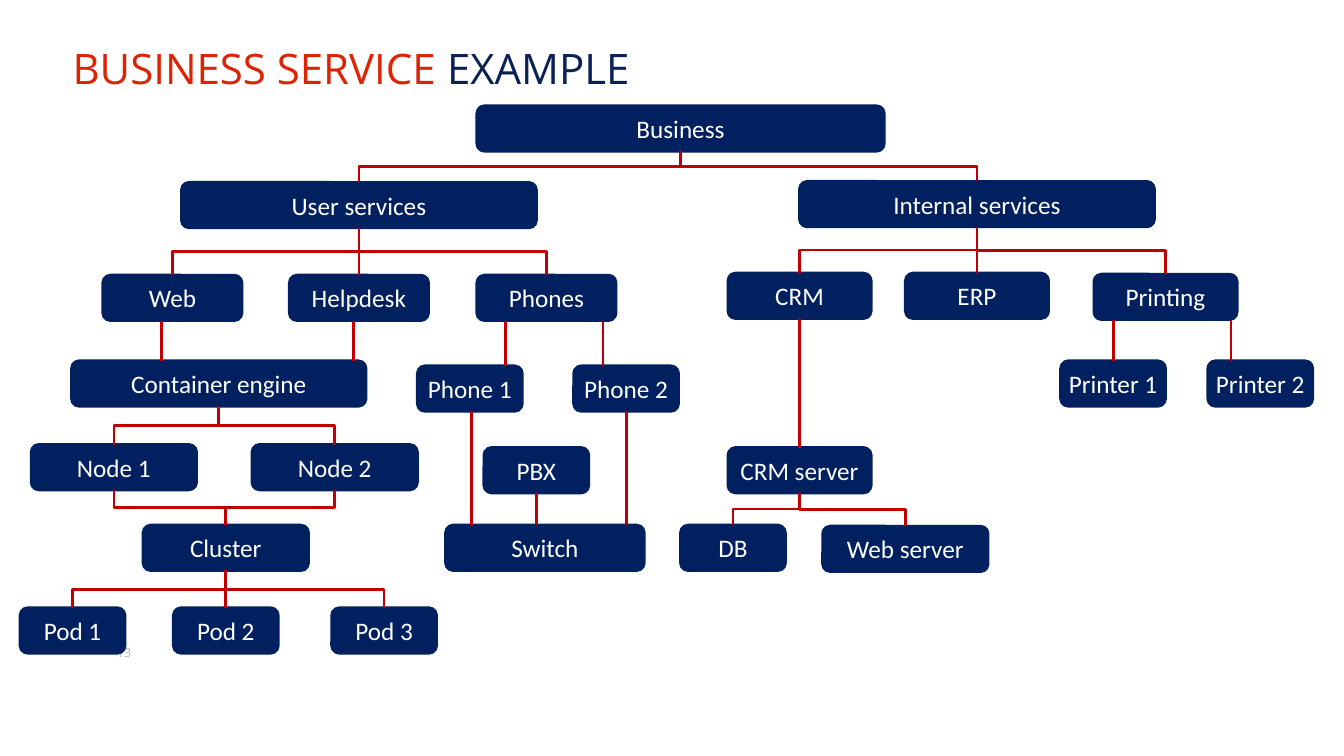
from dataclasses import dataclass
from typing import Optional
from lxml.etree import SubElement
from pptx import Presentation as Deck
from pptx.dml.color import RGBColor as Color
from pptx.enum.shapes import MSO_CONNECTOR as Wire, MSO_SHAPE as Form
from pptx.enum.text import MSO_ANCHOR as Anchor, PP_ALIGN as Align
from pptx.oxml.ns import qn
from pptx.util import Inches, Pt

NAVY = Color(0x00, 0x20, 0x60)
INK = Color(0x0B, 0x21, 0x56)
RED = Color(0xC0, 0x00, 0x00)
FLAME = Color(0xDE, 0x23, 0x04)
WHITE = Color(0xFF, 0xFF, 0xFF)
GREY = Color(0xB6, 0xB6, 0xB6)
TALL = 4.5
SMALL, MID, WIDE = 10.4, 14.2, 16.4


def grid(count: float) -> int:
    return Inches(count / 10)


@dataclass(frozen=True)
class Node:
    name: str
    col: float
    row: float
    span: float

    @property
    def mid(self) -> int:
        return grid(self.col) + grid(self.span) // 2


@dataclass(frozen=True)
class Link:
    start: str
    end: str
    col: Optional[float] = None


NODES = [
    Node("Business", 47.3, 10.5, 40.4),
    Node("User services", 18, 18.1, 35.2),
    Node("Internal services", 79.3, 18, 35.2),
    Node("Web", 10.2, 27.3, 13.8),
    Node("Helpdesk", 28.7, 27.3, 13.8),
    Node("Phones", 47.3, 27.3, 13.8),
    Node("CRM", 72.2, 27.1, MID),
    Node("ERP", 89.8, 27.1, MID),
    Node("Printing", 108.5, 27.2, MID),
    Node("Container engine", 7.1, 35.8, 29.2),
    Node("Phone 1", 41.4, 36.3, SMALL),
    Node("Phone 2", 56.9, 36.3, SMALL),
    Node("Printer 1", 105.2, 35.8, SMALL),
    Node("Printer 2", 119.8, 35.8, SMALL),
    Node("Node 1", 3.1, 44.1, WIDE),
    Node("Node 2", 25, 44.1, WIDE),
    Node("PBX", 48, 44.4, SMALL),
    Node("CRM server", 72.2, 44.4, MID),
    Node("Cluster", 14.2, 52.1, WIDE),
    Node("Switch", 44.2, 52.1, 19.7),
    Node("DB", 67.5, 52.1, SMALL),
    Node("Web server", 81.6, 52.2, WIDE),
    Node("Pod 1", 2, 60.3, SMALL),
    Node("Pod 2", 17.2, 60.3, SMALL),
    Node("Pod 3", 32.9, 60.3, SMALL),
]

LINKS = [
    Link("Business", "User services"),
    Link("Business", "Internal services"),
    Link("User services", "Web"),
    Link("User services", "Helpdesk"),
    Link("User services", "Phones"),
    Link("Internal services", "CRM"),
    Link("Internal services", "ERP"),
    Link("Internal services", "Printing"),
    Link("Web", "Container engine", 16),
    Link("Helpdesk", "Container engine", 35.1),
    Link("Phones", "Phone 1", 50.1),
    Link("Phones", "Phone 2", 59.8),
    Link("Printing", "Printer 1", 110.4),
    Link("Printing", "Printer 2", 122.1),
    Link("Container engine", "Node 1"),
    Link("Container engine", "Node 2"),
    Link("Node 1", "Cluster"),
    Link("Node 2", "Cluster"),
    Link("Cluster", "Pod 1"),
    Link("Cluster", "Pod 2"),
    Link("Cluster", "Pod 3"),
    Link("Phone 1", "Switch", 46.8),
    Link("PBX", "Switch", 53.2),
    Link("Phone 2", "Switch", 62.1),
    Link("CRM", "CRM server"),
    Link("CRM server", "DB"),
    Link("CRM server", "Web server"),
]


def write(shape, *parts, size: float, font: str, align=Align.LEFT,
          inset: float = 0.5, wrap: bool = True, line: float = 1.0) -> None:
    frame = shape.text_frame
    frame.word_wrap = wrap
    frame.vertical_anchor = Anchor.MIDDLE
    frame.margin_left = frame.margin_right = grid(inset)
    frame.margin_top = frame.margin_bottom = grid(inset)
    para = frame.paragraphs[0]
    para.alignment = align
    para.line_spacing = line
    for text, tint in parts:
        run = para.add_run()
        run.text = text
        run.font.size = Pt(size)
        run.font.name = font
        run.font.color.rgb = tint


def draw_node(slide, node: Node):
    box = slide.shapes.add_shape(
        Form.ROUNDED_RECTANGLE, grid(node.col), grid(node.row), grid(node.span), grid(TALL))
    box.shadow.inherit = False
    box.fill.solid()
    box.fill.fore_color.rgb = NAVY
    box.line.color.rgb = NAVY
    box.line.width = Pt(2)
    write(box, (node.name, WHITE), size=18, font="Calibri", align=Align.CENTER)
    return box


def turn(wire, x1: int, y1: int, x2: int, y2: int) -> None:
    drop, shift = y2 - y1, abs(x2 - x1)
    wire.left = (x1 + x2 - drop) // 2
    wire.top = (y1 + y2 - shift) // 2
    wire.width, wire.height = drop, shift
    frame = wire._element.spPr.find(qn("a:xfrm"))
    for key in ("flipH", "flipV"):
        frame.attrib.pop(key, None)
    if x2 > x1:
        frame.set("rot", str(270 * 60000))
        frame.set("flipH", "1")
    else:
        frame.set("rot", str(90 * 60000))


def draw_link(slide, link: Link, nodes: dict, boxes: dict) -> None:
    start, end = nodes[link.start], nodes[link.end]
    x1, x2 = (start.mid, end.mid) if link.col is None else (grid(link.col),) * 2
    y1, y2 = grid(start.row + TALL), grid(end.row)
    bent = abs(x1 - x2) > grid(0.1)
    wire = slide.shapes.add_connector(Wire.ELBOW if bent else Wire.STRAIGHT, x1, y1, x2, y2)
    if abs(x1 - start.mid) < grid(0.05):
        wire.begin_connect(boxes[start.name], 2)
    if abs(x2 - end.mid) < grid(0.05):
        wire.end_connect(boxes[end.name], 0)
    if bent:
        turn(wire, x1, y1, x2, y2)
    wire.line.color.rgb = RED
    wire.line.width = Pt(2)
    SubElement(wire._element.spPr, qn("a:effectLst"))


def main() -> None:
    deck = Deck()
    deck.slide_width, deck.slide_height = Inches(13.33), Inches(7.5)
    slide = deck.slides.add_slide(deck.slide_layouts[6])
    page = slide.shapes.add_textbox(grid(11.3), grid(63.5), grid(2.2), grid(2.5))
    write(page, ("13", GREY), size=9, font="Open Sans", inset=0.3, wrap=False)
    title = slide.shapes.add_textbox(grid(6.7), grid(3.5), grid(120), grid(7))
    write(title, ("BUSINESS SERVICE ", FLAME), ("EXAMPLE", INK),
          size=30, font="Open Sans", line=0.9)
    nodes = {node.name: node for node in NODES}
    boxes = {node.name: draw_node(slide, node) for node in NODES}
    for link in LINKS:
        draw_link(slide, link, nodes, boxes)
    deck.save("out.pptx")


if __name__ == "__main__":
    main()
